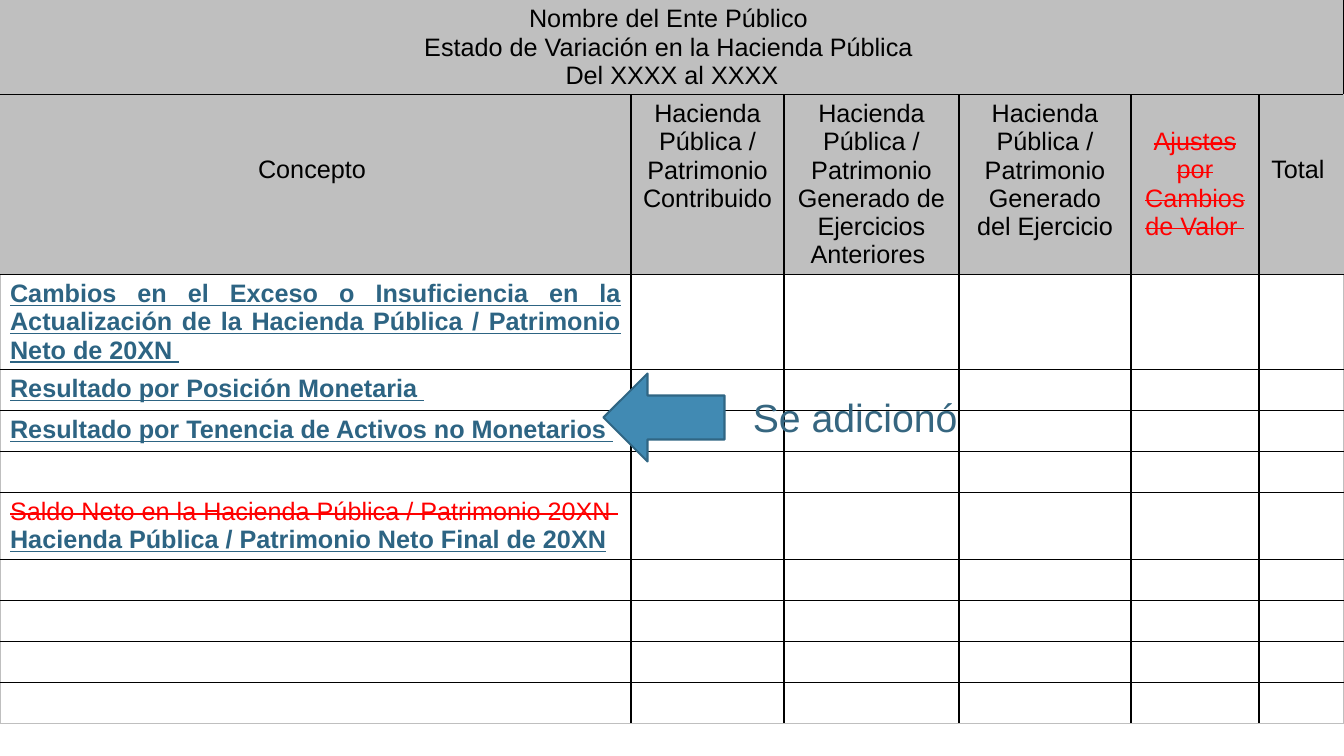
"""Build the slide of the statement of changes in public equity."""
from lxml import etree
from pptx import Presentation
from pptx import util as u
from pptx.dml.color import RGBColor
from pptx.enum import shapes, text
from pptx.oxml.ns import qn

BLACK = RGBColor(0x00, 0x00, 0x00)
GREY = RGBColor(0xBF, 0xBF, 0xBF)
RED = RGBColor(0xFF, 0x00, 0x00)
BLUE = RGBColor(0x2D, 0x64, 0x83)
ARROW_FILL = RGBColor(0x41, 0x8A, 0xB3)
ARROW_LINE = RGBColor(0x30, 0x66, 0x84)
NOTE_COLOR = RGBColor(0x36, 0x66, 0x80)

PX = 914400 / 100.8
PLAIN = {"size": u.Pt(18), "name": "Arial", "bold": False}
ADDED = {**PLAIN, "bold": True, "underline": True}
NOTE = {**PLAIN, "size": u.Pt(28)}
CENTER, JUSTIFY = text.PP_ALIGN.CENTER, text.PP_ALIGN.JUSTIFY

TITLE = ["Nombre del Ente Público ", "Estado de Variación en la Hacienda Pública ",
         "Del XXXX al XXXX"]
HEADINGS = [
    ("Concepto ", 2, BLACK),
    ("Hacienda Pública / Patrimonio Contribuido ", 0, BLACK),
    ("Hacienda Pública / Patrimonio Generado de Ejercicios Anteriores ", 0, BLACK),
    ("Hacienda Pública / Patrimonio Generado del Ejercicio", 0, BLACK),
    ("Ajustes por Cambios de Valor ", 1, RED),
    ("Total ", 2, BLACK),
]
CONCEPTS = {
    2: [("Cambios en el Exceso o Insuficiencia en la Actualización de la Hacienda "
         "Pública / Patrimonio Neto de 20XN ", BLUE)],
    3: [("Resultado por Posición Monetaria ", BLUE)],
    4: [("Resultado por Tenencia de Activos no Monetarios ", BLUE)],
    6: [("Saldo Neto en la Hacienda Pública / Patrimonio 20XN ", RED),
        ("Hacienda Pública / Patrimonio Neto Final de 20XN", BLUE)],
}
COLUMNS = [631, 153, 175, 172, 128, 85]
ROWS = [94, 180, 95, 41, 41, 41, 67, 41, 41, 41, 41]
LINE_HEIGHT, CELL_INSET = 28, 5


def px(value):
    return u.Emu(round(value * PX))


def write(frame, lines, align):
    for index, (words, color) in enumerate(lines):
        para = frame.paragraphs[0] if index == 0 else frame.add_paragraph()
        para.alignment = align
        span = para.add_run()
        span.text = words
        for name, value in (ADDED if color == BLUE else PLAIN).items():
            setattr(span.font, name, value)
        span.font.color.rgb = color
        if color == RED:
            span.font._element.set("strike", "sngStrike")


def draw_borders(cell, row, column):
    outer = {"lnL": column == 0, "lnR": column == len(COLUMNS) - 1,
             "lnT": row == 0, "lnB": row == len(ROWS) - 1}
    properties = cell._tc.get_or_add_tcPr()
    for index, (side, at_edge) in enumerate(outer.items()):
        line = etree.Element(qn(f"a:{side}"), w=str(u.Pt(1)))
        solid = etree.SubElement(line, qn("a:solidFill"))
        color = GREY if at_edge else BLACK
        etree.SubElement(solid, qn("a:srgbClr"), val=str(color))
        properties.insert(index, line)


def add_statement(page):
    frame = page.shapes.add_table(len(ROWS), len(COLUMNS), 0, 0,
                                  px(sum(COLUMNS)), px(sum(ROWS)))
    table = frame.table
    table.first_row = table.horz_banding = False
    for column, width in zip(table.columns, COLUMNS):
        column.width = px(width)
    for row, height in zip(table.rows, ROWS):
        row.height = px(height)
    for row in range(len(ROWS)):
        for column in range(len(COLUMNS)):
            cell = table.cell(row, column)
            if row < 2:
                cell.fill.solid()
                cell.fill.fore_color.rgb = GREY
            else:
                cell.fill.background()
            draw_borders(cell, row, column)
    table.cell(0, 0).merge(table.cell(0, len(COLUMNS) - 1))
    write(table.cell(0, 0).text_frame, [(line, BLACK) for line in TITLE], CENTER)
    for column, (words, lines_down, color) in enumerate(HEADINGS):
        cell = table.cell(1, column)
        cell.margin_top = px(CELL_INSET + lines_down * LINE_HEIGHT)
        write(cell.text_frame, [(words, color)], CENTER)
    for row, lines in CONCEPTS.items():
        write(table.cell(row, 0).text_frame, lines, JUSTIFY)


def add_callout(page):
    arrow = page.shapes.add_shape(shapes.MSO_SHAPE.DOWN_ARROW,
                                  px(620), px(357), px(88), px(121))
    arrow.rotation = 90
    arrow.shadow.inherit = False
    arrow.fill.solid()
    arrow.fill.fore_color.rgb = ARROW_FILL
    arrow.line.color.rgb = ARROW_LINE
    arrow.line.width = u.Pt(1.5)
    box = page.shapes.add_textbox(px(743), px(388), px(329), px(58))
    box.text_frame.word_wrap = True
    span = box.text_frame.paragraphs[0].add_run()
    span.text = "Se adicionó"
    for name, value in NOTE.items():
        setattr(span.font, name, value)
    span.font.color.rgb = NOTE_COLOR


def main():
    deck = Presentation()
    deck.slide_width, deck.slide_height = px(1344), px(756)
    page = deck.slides.add_slide(deck.slide_layouts[6])
    add_statement(page)
    add_callout(page)
    deck.save("out.pptx")


if __name__ == "__main__":
    main()
